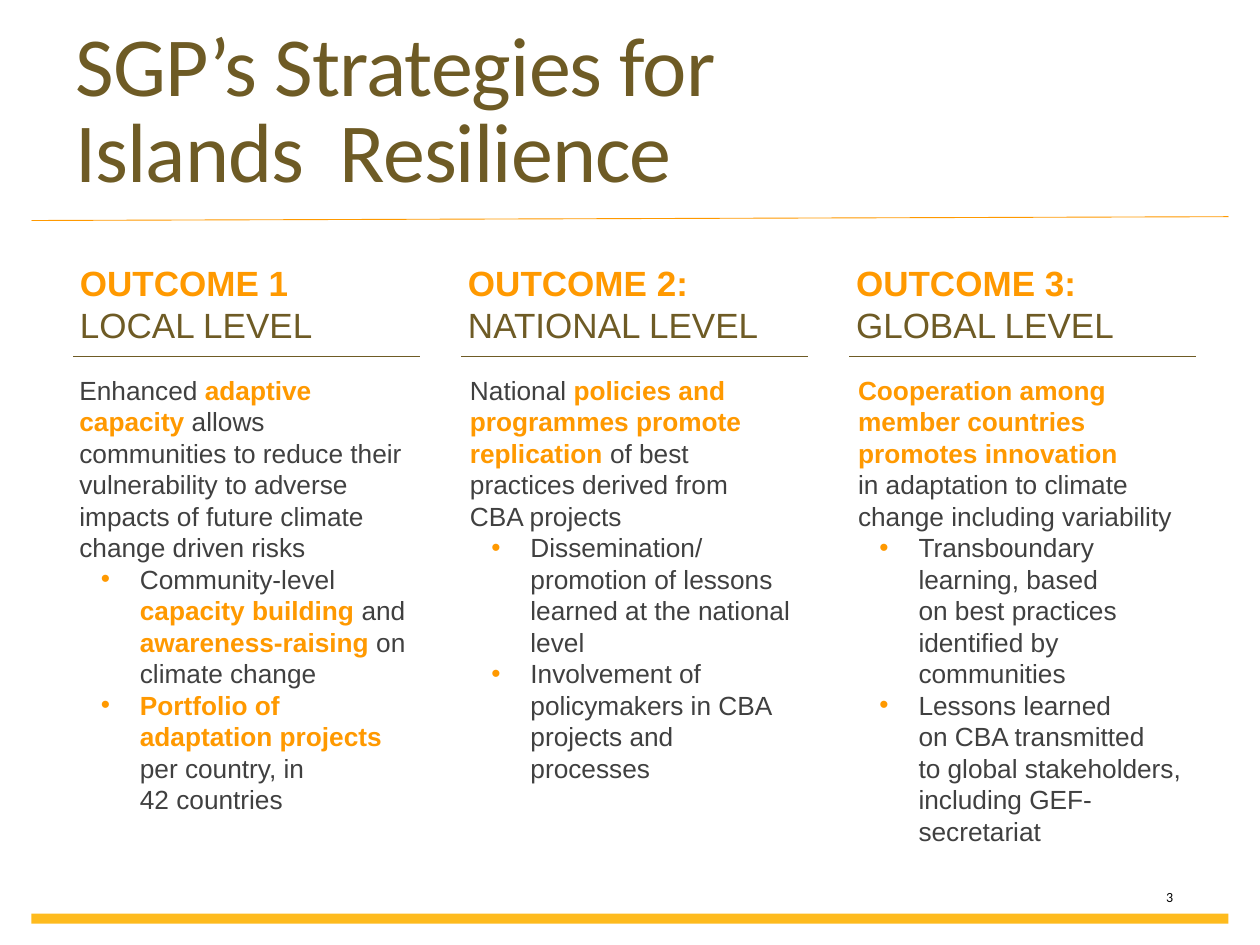
from lxml import etree
from pptx import Presentation
from pptx.dml.color import RGBColor
from pptx.enum.shapes import MSO_CONNECTOR, MSO_SHAPE
from pptx.enum.text import MSO_ANCHOR, PP_ALIGN
from pptx.oxml.ns import qn
from pptx.util import Inches, Pt

STRAIGHT = MSO_CONNECTOR.STRAIGHT
RECT, ROUNDED = MSO_SHAPE.RECTANGLE, MSO_SHAPE.ROUNDED_RECTANGLE
MIDDLE, TOP = MSO_ANCHOR.MIDDLE, MSO_ANCHOR.TOP
LEFT, RIGHT = PP_ALIGN.LEFT, PP_ALIGN.RIGHT

COLORS = {"accent": "FF9900", "brown": "6E5B25", "body": "404040",
          "bar": "FEBB1E", "black": "000000"}

TITLE = "SGP’s Strategies for Islands  Resilience"
PAGE_NUMBER = "3"

# Text between asterisks is bold and in the accent colour.
COLUMNS = [
    {"heading": "*OUTCOME 1\n*LOCAL LEVEL",
     "body_left": 0.63,
     "intro": "Enhanced *adaptive capacity *allows communities to reduce their "
              "vulnerability to adverse impacts of future climate change driven risks",
     "bullets": ["Community-level *capacity building *and *awareness-raising* on climate change",
                 "*Portfolio of adaptation projects *per country, in \n42 countries"]},
    {"heading": "*OUTCOME 2:\n*NATIONAL LEVEL",
     "body_left": 3.73,
     "intro": "National *policies and programmes promote replication *of best "
              "practices derived from \nCBA projects",
     "bullets": ["Dissemination/promotion of lessons learned at the national level",
                 "Involvement of policymakers in CBA projects and processes"]},
    {"heading": "*OUTCOME 3:\n*GLOBAL LEVEL",
     "body_left": 6.81,
     "intro": "*Cooperation among member countries promotes innovation \n*"
              "in adaptation to climate change including variability",
     "bullets": ["Transboundary learning, based \non best practices identified by communities",
                 "Lessons learned \non CBA transmitted \nto global stakeholders, "
                 "including GEF-secretariat"]},
]

RULE_LEFT, RULE_WIDTH, RULE_TOP, PITCH = 0.58, 2.75, 2.83, 3.08
HEADING_SHIFT = -0.07


def rgb(name):
    return RGBColor.from_string(COLORS[name])


def add_line(slide, x1, y1, x2, y2, color):
    line = slide.shapes.add_connector(STRAIGHT, *map(Inches, (x1, y1, x2, y2)))
    line.line.color.rgb = rgb(color)
    line.line.width = Pt(0.5)
    etree.SubElement(line._element.spPr, qn("a:effectLst"))


def add_text(p, text, color, size, font="Arial"):
    """Write text, with the parts between asterisks accented."""
    for i, part in enumerate(text.split("*")):
        accented = i % 2 == 1
        for j, piece in enumerate(part.split("\n")):
            if j:
                p.add_line_break()
            if not piece:
                continue
            r = p.add_run()
            r.text = piece
            fmt = {"name": font, "size": Pt(size), "bold": accented}
            for key, value in fmt.items():
                setattr(r.font, key, value)
            r.font.color.rgb = rgb("accent" if accented else color)


def add_box(slide, x, y, w, h, anchor=TOP, margin=None):
    sp = slide.shapes.add_textbox(*map(Inches, (x, y, w, h)))
    tf = sp.text_frame
    tf.word_wrap = True
    tf.vertical_anchor = anchor
    if margin is not None:
        for side in ("left", "right", "top", "bottom"):
            setattr(tf, f"margin_{side}", Inches(margin))
    return tf


def set_bullet(p):
    p.level = 1
    pPr = p._p.get_or_add_pPr()
    pPr.set("marL", str(Inches(0.48)))
    pPr.set("indent", str(Inches(-0.31)))
    color = etree.SubElement(pPr, qn("a:buClr"))
    etree.SubElement(color, qn("a:srgbClr"), val=COLORS["accent"])
    etree.SubElement(pPr, qn("a:buFont"), typeface="Arial")
    etree.SubElement(pPr, qn("a:buChar"), char="•")


def add_heading(slide, x, text):
    sp = slide.shapes.add_shape(ROUNDED, *map(Inches, (x, 2.14, 2.16, 0.54)))
    sp.shadow.inherit = False
    sp.fill.background()
    sp.line.fill.background()
    tf = sp.text_frame
    tf.word_wrap = False
    tf.vertical_anchor = MIDDLE
    p = tf.paragraphs[0]
    p.alignment = LEFT
    add_text(p, text, "brown", 20)


def add_column(slide, index, column):
    x = RULE_LEFT + index * PITCH
    add_heading(slide, x + HEADING_SHIFT, column["heading"])
    add_line(slide, x, RULE_TOP, x + RULE_WIDTH, RULE_TOP, "brown")
    tf = add_box(slide, column["body_left"], 2.97, 2.62, 3.8, margin=0)
    add_text(tf.paragraphs[0], column["intro"], "body", 15)
    for text in column["bullets"]:
        p = tf.add_paragraph()
        set_bullet(p)
        add_text(p, text, "body", 15)


def main():
    prs = Presentation()
    prs.slide_width, prs.slide_height = Inches(10), Inches(7.5)
    slide = prs.slides.add_slide(prs.slide_layouts[6])

    add_line(slide, 0.25, 1.75, 9.75, 1.72, "accent")
    bar = slide.shapes.add_shape(RECT, *map(Inches, (0.25, 7.25, 9.5, 0.08)))
    bar.shadow.inherit = False
    bar.fill.solid()
    bar.fill.fore_color.rgb = rgb("bar")
    bar.line.fill.background()

    p = add_box(slide, 0.5, 0.17, 5.75, 1.47, MIDDLE).paragraphs[0]
    p.line_spacing = 0.85
    add_text(p, TITLE, "brown", 48, "Calibri")
    p.runs[0].font._element.set("spc", "-50")

    for index, column in enumerate(COLUMNS):
        add_column(slide, index, column)

    p = add_box(slide, 8.33, 7, 1.08, 0.27).paragraphs[0]
    p.alignment = RIGHT
    add_text(p, PAGE_NUMBER, "black", 8, "Calibri")

    prs.save("out.pptx")


if __name__ == "__main__":
    main()
